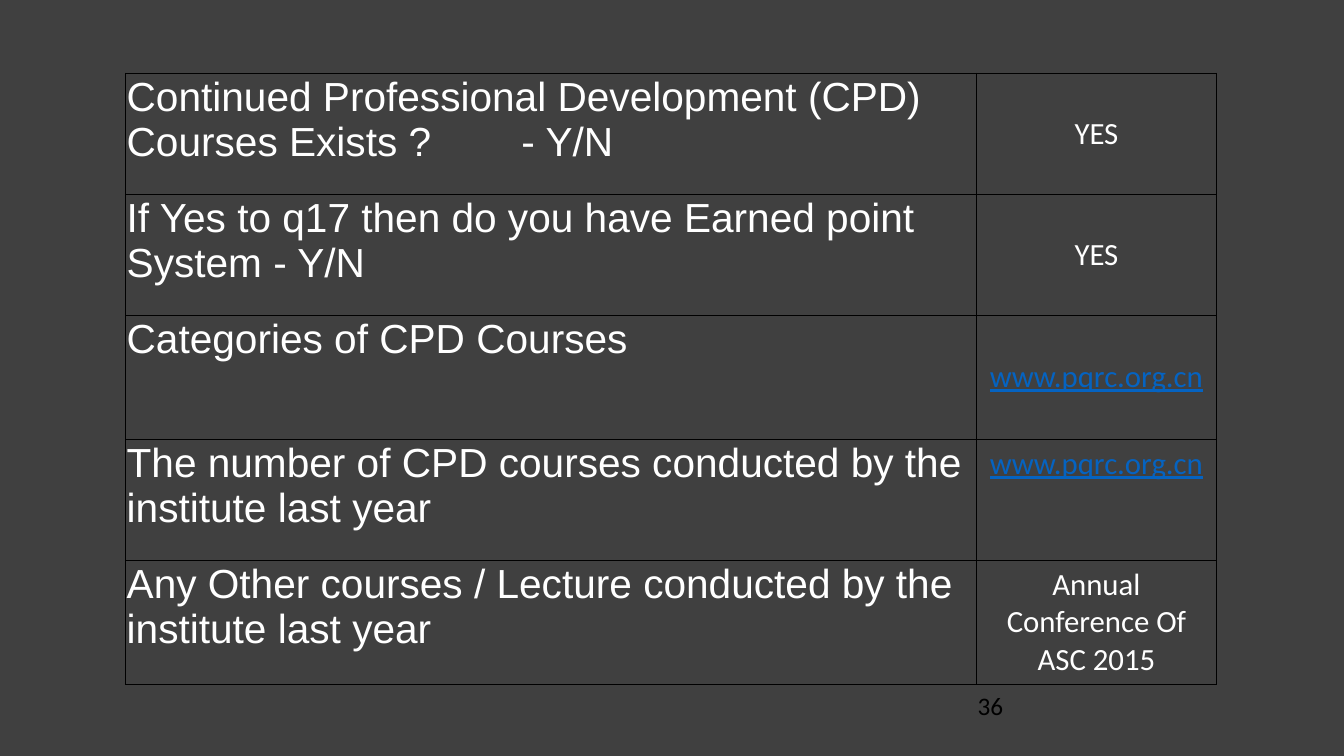
from pptx import Presentation
from pptx.dml.color import RGBColor
from pptx.enum.shapes import MSO_SHAPE
from pptx.enum.text import MSO_ANCHOR, PP_ALIGN
from pptx.oxml import parse_xml
from pptx.oxml.ns import nsdecls
from pptx.util import Pt

DARK = RGBColor(0x40, 0x40, 0x40)
WHITE = RGBColor(0xFF, 0xFF, 0xFF)
BLACK = RGBColor(0, 0, 0)
BLUE = RGBColor(0x05, 0x63, 0xC1)

SITE = "www.pqrc.org.cn"
ROWS = [
    ("Continued Professional Development (CPD) Courses Exists ?\t- Y/N", "YES", 86.4),
    ("If Yes to q17 then do you have Earned point System - Y/N", "YES", 86.4),
    ("Categories of CPD Courses", SITE, 88.6),
    ("The number of CPD courses conducted by the institute last year", SITE, 86.4),
    ("Any Other courses / Lecture conducted by the institute last year",
     "Annual Conference Of ASC 2015", 88.6),
]
TOP_ROW = 3


class Deck:
    head = "Arial"
    body = "Calibri"

    def __init__(self, width, height):
        self.show = Presentation()
        self.show.slide_width = Pt(width)
        self.show.slide_height = Pt(height)
        self.slide = self.show.slides.add_slide(self.show.slide_layouts[6])

    def style(self, part, text, size, name, color, align=PP_ALIGN.LEFT):
        part.text = text
        part.alignment = align
        for run in part.runs:
            font = run.font
            font.size = Pt(size)
            font.name = name
            font.color.rgb = color
            font.underline = text == SITE

    def panel(self, left, top, width, height, color):
        box = self.slide.shapes.add_shape(
            MSO_SHAPE.RECTANGLE, Pt(left), Pt(top), Pt(width), Pt(height))
        box.shadow.inherit = False
        box.fill.solid()
        box.fill.fore_color.rgb = color
        box.line.fill.background()

    def label(self, left, top, width, height, text, size, color):
        box = self.slide.shapes.add_textbox(
            Pt(left), Pt(top), Pt(width), Pt(height))
        box.text_frame.word_wrap = True
        self.style(box.text_frame.paragraphs[0], text, size, self.body, color)

    def cell(self, cell, pads, anchor):
        (cell.margin_left, cell.margin_top,
         cell.margin_right, cell.margin_bottom) = map(Pt, pads)
        cell.vertical_anchor = anchor
        cell.fill.background()
        props = cell._tc.get_or_add_tcPr()
        for spot, side in enumerate("LRTB"):
            props.insert(spot, parse_xml(
                f'<a:ln{side} {nsdecls("a")} w="12700"><a:solidFill>'
                f'<a:srgbClr val="{BLACK}"/></a:solidFill></a:ln{side}>'))

    def tab(self, part, place):
        part._p.get_or_add_pPr().append(parse_xml(
            f'<a:tabLst {nsdecls("a")}><a:tab pos="{Pt(place)}" algn="l"/></a:tabLst>'))

    def table(self, left, top, widths, rows):
        height = sum(row[2] for row in rows)
        frame = self.slide.shapes.add_table(
            len(rows), len(widths), Pt(left), Pt(top), Pt(sum(widths)), Pt(height))
        grid = frame.table
        grid.first_row = grid.horz_banding = False
        for column, width in zip(grid.columns, widths):
            column.width = Pt(width)
        for index, (ask, reply, tall) in enumerate(rows):
            grid.rows[index].height = Pt(tall)
            left_cell, right_cell = grid.rows[index].cells
            self.cell(left_cell, (0.7, 0.7, 0.7, 0), MSO_ANCHOR.TOP)
            part = left_cell.text_frame.paragraphs[0]
            if "\t" in ask:
                self.tab(part, 282)
            self.style(part, ask, 29, self.head, WHITE)
            anchor = MSO_ANCHOR.TOP if index >= TOP_ROW else MSO_ANCHOR.MIDDLE
            self.cell(right_cell, (8.6, 4.3, 8.6, 4.3), anchor)
            self.style(right_cell.text_frame.paragraphs[0], reply, 22, self.body,
                       BLUE if reply == SITE else WHITE, PP_ALIGN.CENTER)


def main():
    deck = Deck(960, 540)
    deck.panel(0, 0, 960, 540, DARK)
    deck.label(691.2, 489.6, 224, 37.4, "36", 18, BLACK)
    deck.table(89.8, 52.4, (607.7, 171.4), ROWS)
    deck.show.save("out.pptx")


if __name__ == "__main__":
    main()
